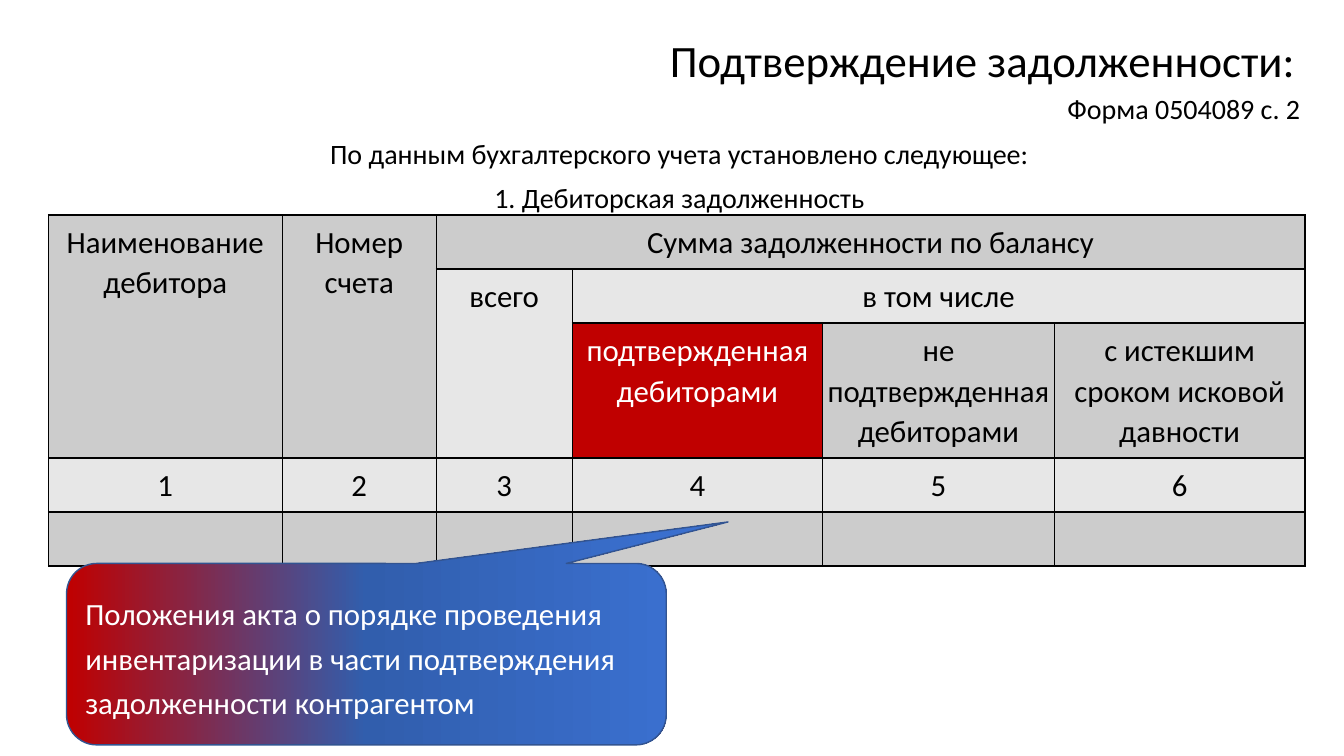
from copy import deepcopy
from dataclasses import dataclass

from lxml.etree import SubElement
from pptx import Presentation
from pptx.dml.color import RGBColor
from pptx.enum.shapes import MSO_SHAPE
from pptx.enum.text import MSO_ANCHOR, PP_ALIGN
from pptx.oxml.ns import qn
from pptx.slide import Slide
from pptx.table import _Cell
from pptx.text.text import TextFrame, _Paragraph
from pptx.util import Pt

BLACK = RGBColor(0x00, 0x00, 0x00)
WHITE = RGBColor(0xFF, 0xFF, 0xFF)
RED = RGBColor(0xC0, 0x00, 0x00)
DARK_BAND = RGBColor(0xCC, 0xCC, 0xCC)
LIGHT_BAND = RGBColor(0xE7, 0xE7, 0xE7)
CALLOUT_LINE = RGBColor(0x32, 0x54, 0x91)
CALLOUT_STOPS = [
    (0, RED),
    (0.5, RGBColor(0x31, 0x5E, 0xAD)),
    (1, RGBColor(0x3A, 0x6F, 0xCE)),
]
FONT = "Calibri"


@dataclass(frozen=True)
class Box:
    left: float
    top: float
    width: float
    height: float

    def lengths(self) -> tuple[Pt, Pt, Pt, Pt]:
        return Pt(self.left), Pt(self.top), Pt(self.width), Pt(self.height)


@dataclass(frozen=True)
class TextStyle:
    size: float
    line_spacing: float
    align: PP_ALIGN = PP_ALIGN.CENTER
    color: RGBColor = BLACK


@dataclass(frozen=True)
class HeaderCell:
    text: str
    row: int
    column: int
    row_span: int = 1
    column_span: int = 1


TITLE_STYLE = TextStyle(32, 0.9, PP_ALIGN.RIGHT)
FORM_STYLE = TextStyle(20, 0.9, PP_ALIGN.RIGHT)
INTRO_STYLE = TextStyle(20, 0.9)
CELL_STYLE = TextStyle(22, 1.07)
CONFIRMED_STYLE = TextStyle(22, 1.07, color=WHITE)
CALLOUT_STYLE = TextStyle(22, 1.2, PP_ALIGN.LEFT, WHITE)

TITLE_BOX = Box(234, 25.92, 698.4, 38.88)
INTRO_BOX = Box(34.56, 64.8, 901.44, 378)
CALLOUT_BOX = Box(47.52, 402.48, 428.4, 129.6)

TABLE_LEFT, TABLE_TOP = 34.56, 153.6
COLUMN_WIDTHS = [167, 110, 97.2, 178.8, 165.6, 179]
ROW_HEIGHTS = [38.6, 38.6, 96.4, 38.6, 38.6]
NUMBER_ROW = 3
CONFIRMED_POSITION = (2, 3)
HEADERS = [
    HeaderCell("Наименование дебитора", 0, 0, row_span=3),
    HeaderCell("Номер счета", 0, 1, row_span=3),
    HeaderCell("Сумма задолженности по балансу", 0, 2, column_span=4),
    HeaderCell("всего", 1, 2, row_span=2),
    HeaderCell("в том числе", 1, 3, column_span=3),
    HeaderCell("подтвержденная дебиторами", *CONFIRMED_POSITION),
    HeaderCell("не подтвержденная дебиторами", 2, 4),
    HeaderCell("с истекшим сроком исковой давности", 2, 5),
]


def write_paragraph(paragraph: _Paragraph, text: str, style: TextStyle) -> None:
    paragraph.text = text
    paragraph.alignment = style.align
    paragraph.line_spacing = style.line_spacing
    for run in paragraph.runs:
        run.font.name = FONT
        run.font.size = Pt(style.size)
        run.font.color.rgb = style.color


def write_lines(text_frame: TextFrame, lines: list[tuple[str, TextStyle]], gap: float = 0) -> None:
    text_frame.word_wrap = True
    for index, (text, style) in enumerate(lines):
        paragraph = text_frame.add_paragraph() if index else text_frame.paragraphs[0]
        write_paragraph(paragraph, text, style)
        if index:
            paragraph.space_before = Pt(gap)


def add_title(slide: Slide) -> None:
    title = slide.shapes.add_textbox(*TITLE_BOX.lengths())
    title.text_frame.vertical_anchor = MSO_ANCHOR.MIDDLE
    write_lines(title.text_frame, [("Подтверждение задолженности:", TITLE_STYLE)])


def add_intro(slide: Slide) -> None:
    intro = slide.shapes.add_textbox(*INTRO_BOX.lengths())
    intro.fill.solid()
    intro.fill.fore_color.rgb = WHITE
    color = intro._element.spPr.find(f"{qn('a:solidFill')}/{qn('a:srgbClr')}")
    SubElement(color, qn("a:alpha"), val="77000")
    lines = [
        ("Форма 0504089 с. 2", FORM_STYLE),
        ("По данным бухгалтерского учета установлено следующее:", INTRO_STYLE),
        ("1. Дебиторская задолженность", INTRO_STYLE),
    ]
    write_lines(intro.text_frame, lines, gap=10)


def format_cell(cell: _Cell, fill: RGBColor) -> None:
    """Set margins, black borders and then the fill, in schema order."""
    cell.margin_left = cell.margin_right = Pt(2.9)
    cell.margin_top = cell.margin_bottom = Pt(5)
    properties = cell._tc.get_or_add_tcPr()
    for side in ("a:lnL", "a:lnR", "a:lnT", "a:lnB"):
        border = SubElement(properties, qn(side), w=str(Pt(1)))
        border_fill = SubElement(border, qn("a:solidFill"))
        SubElement(border_fill, qn("a:srgbClr"), val=str(BLACK))
    cell.fill.solid()
    cell.fill.fore_color.rgb = fill


def add_debt_table(slide: Slide) -> None:
    box = Box(TABLE_LEFT, TABLE_TOP, sum(COLUMN_WIDTHS), sum(ROW_HEIGHTS))
    table = slide.shapes.add_table(
        len(ROW_HEIGHTS), len(COLUMN_WIDTHS), *box.lengths()
    ).table
    table.first_row = table.horz_banding = False
    for column, width in zip(table.columns, COLUMN_WIDTHS):
        column.width = Pt(width)
    for row_index, (row, height) in enumerate(zip(table.rows, ROW_HEIGHTS)):
        row.height = Pt(height)
        band = LIGHT_BAND if row_index % 2 else DARK_BAND
        for column_index, cell in enumerate(row.cells):
            confirmed = (row_index, column_index) == CONFIRMED_POSITION
            format_cell(cell, RED if confirmed else band)

    numbers = [
        HeaderCell(str(column + 1), NUMBER_ROW, column)
        for column in range(len(COLUMN_WIDTHS))
    ]
    for header in HEADERS + numbers:
        cell = table.cell(header.row, header.column)
        if header.row_span > 1 or header.column_span > 1:
            last_row = header.row + header.row_span - 1
            last_column = header.column + header.column_span - 1
            cell.merge(table.cell(last_row, last_column))
        confirmed = (header.row, header.column) == CONFIRMED_POSITION
        style = CONFIRMED_STYLE if confirmed else CELL_STYLE
        write_paragraph(cell.text_frame.paragraphs[0], header.text, style)


def add_callout(slide: Slide) -> None:
    callout = slide.shapes.add_shape(
        MSO_SHAPE.ROUNDED_RECTANGULAR_CALLOUT, *CALLOUT_BOX.lengths()
    )
    callout.shadow.inherit = False
    for index, value in enumerate((0.603, -0.729, 0.167)):
        callout.adjustments[index] = value
    callout.fill.gradient()
    callout.fill.gradient_angle = 0
    stop_list = callout._element.spPr.find(f"{qn('a:gradFill')}/{qn('a:gsLst')}")
    stop_list.insert(1, deepcopy(stop_list[0]))
    for stop, (position, color) in zip(callout.fill.gradient_stops, CALLOUT_STOPS):
        stop.position = position
        stop.color.rgb = color
    callout.line.color.rgb = CALLOUT_LINE
    callout.line.width = Pt(1)
    callout.text_frame.vertical_anchor = MSO_ANCHOR.MIDDLE
    text = (
        "Положения акта о порядке проведения инвентаризации "
        "в части подтверждения задолженности контрагентом"
    )
    write_lines(callout.text_frame, [(text, CALLOUT_STYLE)])


def main() -> None:
    presentation = Presentation()
    presentation.slide_width, presentation.slide_height = Pt(960), Pt(540)
    slide = presentation.slides.add_slide(presentation.slide_layouts[6])
    add_title(slide)
    add_intro(slide)
    add_debt_table(slide)
    add_callout(slide)
    presentation.save("out.pptx")


if __name__ == "__main__":
    main()
